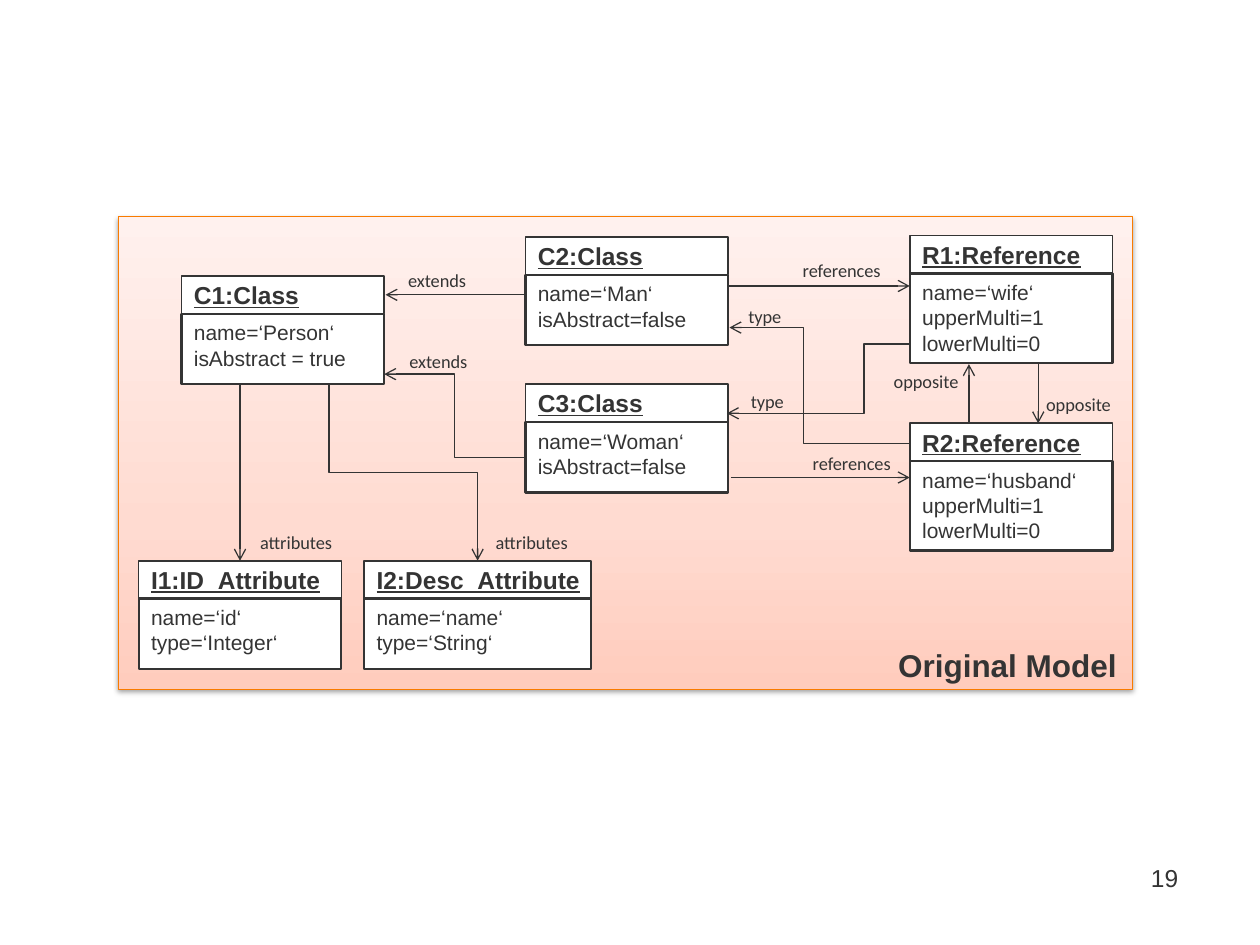
from lxml import etree
from pptx import Presentation
from pptx.dml.color import RGBColor
from pptx.enum.shapes import MSO_CONNECTOR as Link, MSO_SHAPE as Preset
from pptx.enum.text import MSO_ANCHOR as Anchor, PP_ALIGN as Align
from pptx.oxml import parse_xml
from pptx.oxml.ns import nsdecls, qn
from pptx.util import Inches, Pt

INK, PAPER, ORANGE = "343434", "FFFFFF", "F97B00"
BOX_W, HEADER_H = 1.61, 0.3
LABEL_H = 0.29

# Object boxes: left, top, width, heading, attribute lines
OBJECTS = [
    (1.44, 2.19, BOX_W, "C1:Class", ["name=‘Person‘", "isAbstract = true"]),
    (4.17, 1.88, BOX_W, "C2:Class", ["name=‘Man‘", "isAbstract=false"]),
    (4.17, 3.05, BOX_W, "C3:Class", ["name=‘Woman‘", "isAbstract=false"]),
    (7.22, 1.87, BOX_W, "R1:Reference",
     ["name=‘wife‘", "upperMulti=1", "lowerMulti=0"]),
    (7.22, 3.36, BOX_W, "R2:Reference",
     ["name=‘husband‘", "upperMulti=1", "lowerMulti=0"]),
    (1.1, 4.45, BOX_W, "I1:ID_Attribute", ["name=‘id‘", "type=‘Integer‘"]),
    (2.89, 4.45, 1.8, "I2:Desc_Attribute", ["name=‘name‘", "type=‘String‘"]),
]

# Straight arrows: from x, y, to x, y
STRAIGHT = [
    (4.17, 2.34, 3.06, 2.34),
    (8.24, 2.89, 8.24, 3.36),
    (7.69, 3.36, 7.69, 2.89),
    (5.78, 2.27, 7.22, 2.27),
    (5.8, 3.79, 7.22, 3.79),
]

# Elbow arrows: from x, y, to x, y, share of the way to the bend
ELBOWS = [
    (4.17, 3.63, 3.05, 2.97, 0.5),
    (7.22, 3.52, 5.79, 2.6, 0.59),
    (7.22, 2.73, 5.77, 3.28, 0.25),
]

# Arrow labels: left, top, width, text
LABELS = [
    (2.94, 2.09, 1.06, "extends"),
    (2.95, 2.73, 1.06, "extends"),
    (8.13, 3.07, 0.86, "opposite"),
    (6.88, 2.89, 0.94, "opposite"),
    (6.17, 2.01, 1.02, "references"),
    (6.25, 3.54, 1.02, "references"),
    (5.56, 2.37, 1.02, "type"),
    (5.58, 3.05, 1.02, "type"),
    (1.84, 4.17, 1.02, "attributes"),
    (3.71, 4.17, 1.02, "attributes"),
]


def rgb(hex_code):
    return RGBColor.from_string(hex_code)


def write(frame, lines, size, font="Arial", bold=False, underline=False,
          align=Align.LEFT, wrap=True):
    frame.word_wrap = wrap
    for i, line in enumerate(lines):
        para = frame.paragraphs[0] if i == 0 else frame.add_paragraph()
        para.text = line
        para.alignment = align
        para.font.name, para.font.size = font, Pt(size)
        para.font.bold, para.font.underline = bold, underline
        para.font.color.rgb = rgb(INK)


def add_text(slide, left, top, width, height, text, size, **style):
    box = slide.shapes.add_textbox(*map(Inches, (left, top, width, height)))
    write(box.text_frame, [text], size, **style)


def add_rect(slide, left, top, width, height, line_color, line_width):
    rect = slide.shapes.add_shape(
        Preset.RECTANGLE, *map(Inches, (left, top, width, height)))
    rect.shadow.inherit = False
    rect.line.color.rgb = rgb(line_color)
    rect.line.width = Pt(line_width)
    return rect


def add_frame(slide):
    """Panel with an upward gradient and a soft shadow below."""
    frame = add_rect(slide, 0.94, 1.72, 8.05, 3.75, ORANGE, 0.75)
    stops = "".join(
        f'<a:gs pos="{share * 1000}"><a:srgbClr val="{color}"/></a:gs>'
        for share, color in [(0, "FFCCBD"), (35, "FFDBD1"), (100, "FFF1EE")])
    gradient = parse_xml(
        f'<a:gradFill {nsdecls("a")} rotWithShape="1"><a:gsLst>{stops}</a:gsLst>'
        '<a:lin ang="16200000" scaled="0"/></a:gradFill>')
    props = frame._element.spPr
    props.find(qn("a:prstGeom")).addnext(gradient)
    props.find(qn("a:effectLst")).append(parse_xml(
        f'<a:outerShdw {nsdecls("a")} blurRad="{Pt(3.1)}" dist="{Pt(1.6)}" '
        'dir="5400000" rotWithShape="0"><a:srgbClr val="000000">'
        '<a:alpha val="38000"/></a:srgbClr></a:outerShdw>'))


def add_object(slide, left, top, width, heading, attributes):
    """Heading box over an attribute box; returns the heading box."""
    header = add_rect(slide, left, top, width, HEADER_H, INK, 1)
    body_h = 0.26 + 0.15 * len(attributes)
    body = add_rect(slide, left, top + HEADER_H, width, body_h, INK, 1.25)
    for part in (header, body):
        part.fill.solid()
        part.fill.fore_color.rgb = rgb(PAPER)
    header.text_frame.vertical_anchor = Anchor.MIDDLE
    write(header.text_frame, [heading], 14, bold=True, underline=True, wrap=False)
    body.text_frame.vertical_anchor = Anchor.TOP
    write(body.text_frame, attributes, 12)
    return header


def add_arrow(slide, x1, y1, x2, y2, bend=None):
    kind = Link.STRAIGHT if bend is None else Link.ELBOW
    arrow = slide.shapes.add_connector(kind, *map(Inches, (x1, y1, x2, y2)))
    arrow.line.color.rgb = rgb(INK)
    arrow.line.width = Pt(0.75)
    props = arrow._element.spPr
    etree.SubElement(arrow.line._get_or_add_ln(), qn("a:tailEnd"), type="arrow")
    etree.SubElement(props, qn("a:effectLst"))
    if bend is not None:
        guides = props.find(qn("a:prstGeom")).get_or_add_avLst()
        etree.SubElement(guides, qn("a:gd"), name="adj1",
                         fmla=f"val {round(bend * 100000)}")
    return arrow


def add_down_elbow(slide, x1, y1, x2, y2):
    """Elbow that leaves and arrives vertically: a flipped one, turned by 270°."""
    mid_x, mid_y = (x1 + x2) / 2, (y1 + y2) / 2
    half_w, half_h = (y2 - y1) / 2, (x2 - x1) / 2
    arrow = add_arrow(slide, mid_x + half_w, mid_y - half_h,
                      mid_x - half_w, mid_y + half_h, 0.5)
    arrow._element.spPr.find(qn("a:xfrm")).set("rot", "16200000")


def main():
    deck = Presentation()
    deck.slide_width, deck.slide_height = Inches(10), Inches(7.5)
    slide = deck.slides.add_slide(deck.slide_layouts[6])

    # Panel and model objects
    add_frame(slide)
    headers = {item[3]: add_object(slide, *item) for item in OBJECTS}

    # Relations
    for ends in STRAIGHT + ELBOWS:
        add_arrow(slide, *ends)
    id_header = headers["I1:ID_Attribute"]
    id_x = (id_header.left + id_header.width / 2) / Inches(1)
    id_arrow = add_arrow(slide, id_x, 3.05, id_x, 4.45)
    id_arrow.end_connect(id_header, 0)
    add_down_elbow(slide, 2.61, 3.05, 3.79, 4.45)
    for left, top, width, text in LABELS:
        add_text(slide, left, top, width, LABEL_H, text, 10.5,
                 font="Calibri", align=Align.CENTER)

    # Panel caption and page number
    add_text(slide, 7.03, 5.08, 1.96, 0.4, "Original Model", 18,
             bold=True, wrap=False)
    add_text(slide, 8.28, 6.8, 1.17, 0.5, "19", 14, align=Align.RIGHT)

    deck.save("out.pptx")


if __name__ == "__main__":
    main()
